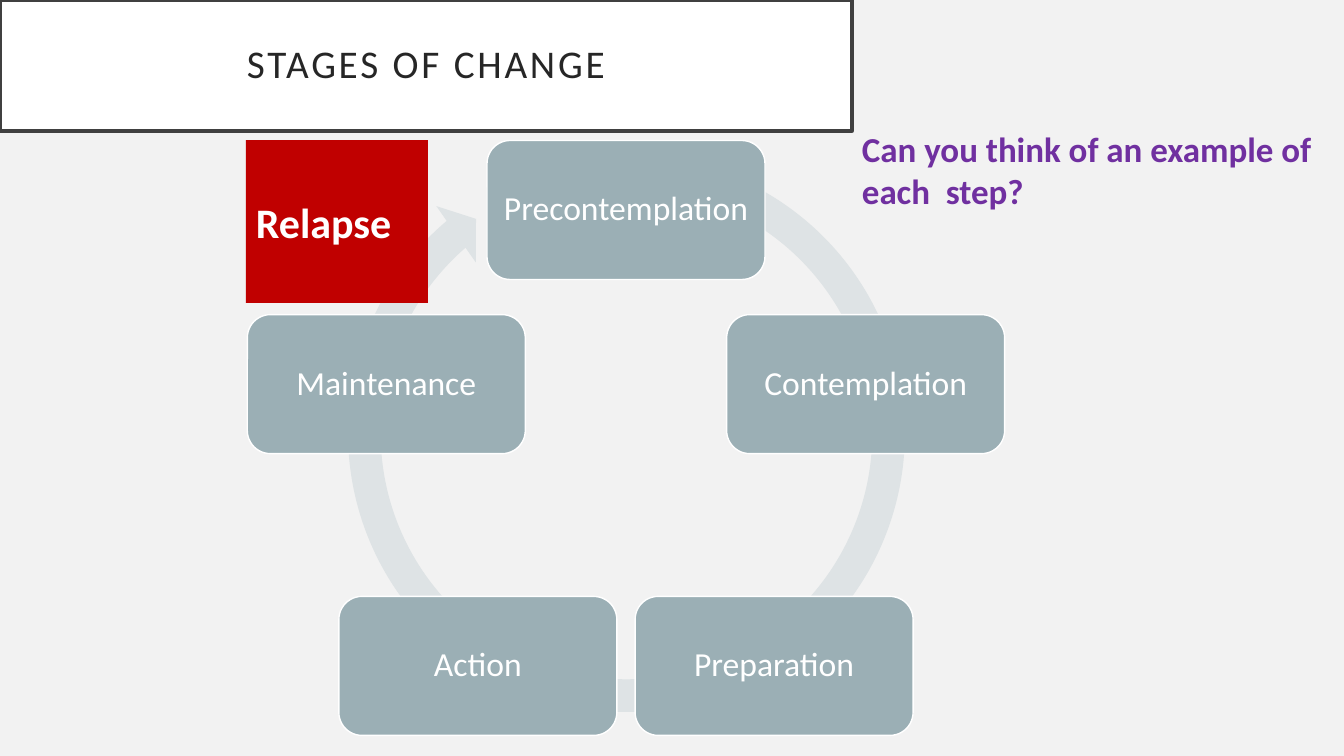
from math import cos, pi, sin

from pptx import Presentation
from pptx import util as u
from pptx.dml.color import RGBColor
from pptx.enum import shapes, text

# Content
TITLE = "STAGES OF CHANGE"
STAGES = ["Precontemplation", "Contemplation", "Preparation", "Action", "Maintenance"]
RELAPSE = "Relapse"
QUESTION = "Can you think of an example of each  step?"

# Look
COLORS = {
    "background": "F2F2F2", "white": "FFFFFF", "title": "262626", "frame": "404040",
    "ring": "DEE3E5", "stage": "9BAFB5", "relapse": "C00000", "question": "7030A0",
}
FONT = "Calibri"

# Layout in px, 100.8 px to the inch
PX = 914400 / 100.8
SLIDE = (1344, 756)
TITLE_BOX = (0, 0, 852, 131)
RING_BOX = (330, 137, 593, 593)
RING_ADJUST = [0.055, 3.307, 137.676, 173.91, 0.058]
CYCLE_CENTER = (626, 462)
CYCLE_RADIUS = 252
STAGE_SIZE = (278, 139)
RELAPSE_BOX = (246, 140, 182, 163)
QUESTION_BOX = (852, 123, 492, 137)


def px(value):
    return u.Emu(round(value * PX))


def color(name):
    return RGBColor.from_string(COLORS[name])


def paint(shape, fill, line=None, width=1):
    shape.shadow.inherit = False
    shape.fill.solid()
    shape.fill.fore_color.rgb = color(fill)
    if line:
        shape.line.color.rgb = color(line)
        shape.line.width = u.Pt(width)
    else:
        shape.line.fill.background()


def write(shape, words, size, ink, bold=False, align=text.PP_ALIGN.LEFT,
          anchor=text.MSO_ANCHOR.MIDDLE, insets=(10, 5), leading=None, tracking=None):
    frame = shape.text_frame
    frame.word_wrap = True
    frame.auto_size = text.MSO_AUTO_SIZE.NONE
    frame.vertical_anchor = anchor
    frame.margin_left = frame.margin_right = px(insets[0])
    frame.margin_top = frame.margin_bottom = px(insets[1])
    para = frame.paragraphs[0]
    para.alignment = align
    if leading:
        para.line_spacing = leading
    span = para.add_run()
    span.text = words
    span.font.name = FONT
    span.font.size = u.Pt(size)
    span.font.bold = bold
    span.font.color.rgb = color(ink)
    if tracking:
        span.font._element.set("spc", str(tracking * 100))


def add_shape(page, kind, box):
    return page.shapes.add_shape(kind, *map(px, box))


def main():
    deck = Presentation()
    deck.slide_width, deck.slide_height = map(px, SLIDE)
    page = deck.slides.add_slide(deck.slide_layouts[5])
    page.background.fill.solid()
    page.background.fill.fore_color.rgb = color("background")
    center = text.PP_ALIGN.CENTER

    # Title
    title = page.shapes.title
    title.left, title.top, title.width, title.height = map(px, TITLE_BOX)
    paint(title, "white", line="frame", width=2.5)
    write(title, TITLE, 28, "title", align=center, insets=(20, 20), leading=0.9, tracking=2)

    # Ring behind the stages
    ring = add_shape(page, shapes.MSO_SHAPE.CIRCULAR_ARROW, RING_BOX)
    for index, value in enumerate(RING_ADJUST):
        ring.adjustments[index] = value
    paint(ring, "ring")

    # Stages, clockwise from the top
    width, height = STAGE_SIZE
    for index, stage in enumerate(STAGES):
        angle = 2 * pi * index / len(STAGES)
        left = CYCLE_CENTER[0] + CYCLE_RADIUS * sin(angle) - width / 2
        top = CYCLE_CENTER[1] - CYCLE_RADIUS * cos(angle) - height / 2
        box = add_shape(page, shapes.MSO_SHAPE.ROUNDED_RECTANGLE, (left, top, width, height))
        paint(box, "stage", line="white")
        write(box, stage, 24, "white", align=center, leading=0.9)

    # Relapse
    relapse = add_shape(page, shapes.MSO_SHAPE.RECTANGLE, RELAPSE_BOX)
    paint(relapse, "relapse")
    write(relapse, RELAPSE, 30, "white", bold=True)

    # Question
    question = page.shapes.add_textbox(*map(px, QUESTION_BOX))
    write(question, QUESTION, 25, "question", bold=True, anchor=text.MSO_ANCHOR.TOP)

    deck.save("out.pptx")


if __name__ == "__main__":
    main()
